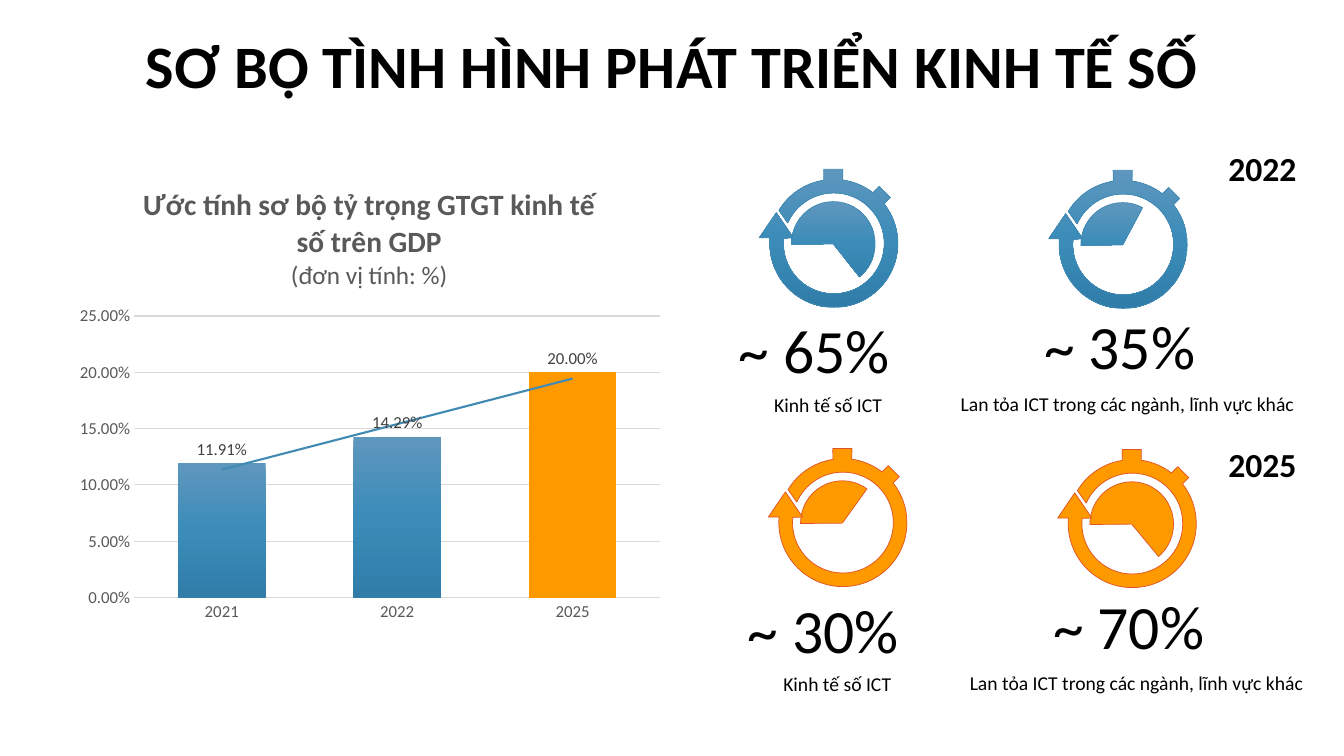
from copy import deepcopy
from math import cos, radians, sin, tan

from lxml import etree
from pptx import Presentation
from pptx.chart.data import CategoryChartData
from pptx.dml.color import RGBColor
from pptx.enum.chart import XL_CHART_TYPE as ChartType, XL_LABEL_POSITION as LabelPos
from pptx.enum.chart import XL_TICK_MARK as Tick
from pptx.enum.shapes import MSO_SHAPE as Preset
from pptx.enum.text import MSO_AUTO_SIZE as AutoSize, PP_ALIGN as Align
from pptx.oxml import parse_xml
from pptx.oxml.ns import nsdecls, qn
from pptx.util import Inches, Pt

FONT = "Calibri"
BLUES = ("5E97BE", "3B8CB9", "307DA9")
BLUE_LINE, ORANGE, ORANGE_LINE = "418AB3", "FF9900", "DF5327"
GRAY, LABEL_GRAY, GRID_GRAY = "595959", "404040", "D9D9D9"

HEADING = "SƠ BỘ TÌNH HÌNH PHÁT TRIỂN KINH TẾ SỐ"
CHART_TITLE = [("Ước tính sơ bộ tỷ trọng GTGT kinh tế số trên GDP", 21, True),
               ("(đơn vị tính: %)", 18, False)]
GDP_SHARE = {"2021": 0.1191, "2022": 0.1429, "2025": 0.2}

ICT, SPREAD = "Kinh tế số ICT", "Lan tỏa ICT trong các ngành, lĩnh vực khác"
# year, fill, outline, then per column: share and end angle of the pie
YEARS = [
    ("2022", BLUES, BLUE_LINE, [("~ 65%", 51.72), ("~ 35%", 298.21)]),
    ("2025", ORANGE, ORANGE_LINE, [("~ 30%", 305.69), ("~ 70%", 50.37)]),
]
# caption, its width, then places of watch, share and caption in the first row
COLUMNS = [
    (ICT, 1.99, (7.53, 1.68), (7.22, 3.05), (7.58, 3.85)),
    (SPREAD, 3.53, (10.4, 1.69), (10.25, 3.01), (9.43, 3.84)),
]
ROW_SHIFT = (0.09, 2.77)
YEAR_AT, YEAR_PITCH = (12.08, 1.42), 2.93
PIE_INSET, PIE_SIZE, PIE_START = 0.32, (0.83, 0.84), 179.44
WATCH_CENTER, OUTER, INNER = (0.74, 0.735), 0.635, 0.5
UNITS = 1000  # outline units per inch


def rgb(color):
    return RGBColor.from_string(color)


def paint(fill, colors):
    """Fill with one colour, or with an even top-to-bottom gradient of three."""
    if isinstance(colors, str):
        fill.solid()
        fill.fore_color.rgb = rgb(colors)
        return
    fill.gradient()
    fill.gradient_angle = 270
    first = fill.gradient_stops[0]._gs
    first.addnext(deepcopy(first))
    for stop, color, position in zip(fill.gradient_stops, colors, (0, 0.5, 1)):
        stop.color.rgb = rgb(color)
        stop.position = position


def style_font(font, size, color="000000", bold=False):
    font.name, font.size, font.bold = FONT, Pt(size), bold
    font.color.rgb = rgb(color)


def add_text(slide, text, at, size, bold=False, align=Align.LEFT, wrap=True,
             inset=None, spacing=0):
    frame = slide.shapes.add_textbox(*map(Inches, at)).text_frame
    frame.word_wrap = wrap
    if inset is None:
        frame.auto_size = AutoSize.SHAPE_TO_FIT_TEXT
    else:
        frame.margin_left = frame.margin_right = frame.margin_bottom = 0
        frame.margin_top = Inches(inset)
    paragraph = frame.paragraphs[0]
    paragraph.alignment = align
    run = paragraph.add_run()
    run.text = text
    style_font(run.font, size, bold=bold)
    if spacing:
        run._r.get_or_add_rPr().set("spc", str(round(spacing * 100)))


def corners(*points):
    return [(point, None) for point in points]


def arc(radius, *angles):
    """Bezier steps round the watch centre, as (end point, control points)."""
    def spot(angle, slope=0):
        a = radians(angle)
        return (WATCH_CENTER[0] + radius * (cos(a) - slope * sin(a)),
                WATCH_CENTER[1] + radius * (sin(a) + slope * cos(a)))
    steps = corners(spot(angles[0]))
    for start, end in zip(angles, angles[1:]):
        slope = 4 / 3 * tan(radians(end - start) / 4)
        steps.append((spot(end), (spot(start, slope), spot(end, -slope))))
    return steps


def watch_outline():
    side_button = corners((1.24, 0.34), (1.3, 0.28), (1.19, 0.17), (1.13, 0.23))
    top_button = corners((0.83, 0), (0.64, 0))
    arrowhead = corners((0.34, 0.68), (0.17, 0.43), (0, 0.68))
    return (side_button + arc(OUTER, -52, -82) + top_button + arc(OUTER, -99, -149)
            + arc(INNER, -156, -90, 0, 90, 186) + arrowhead
            + arc(OUTER, 185, 90, 0, -38))


def add_ring(slide, left, top):
    steps = watch_outline()
    points = [(x * UNITS, y * UNITS) for (x, y), _ in steps]
    builder = slide.shapes.build_freeform(*points[0], scale=Inches(1) / UNITS)
    builder.add_line_segments(points[1:], close=True)
    ring = builder.convert_to_shape(Inches(left), Inches(top))
    lines = list(ring.element.iter(qn("a:lnTo")))
    for line, (_, controls) in zip(lines, steps[1:]):
        if controls:
            line.tag = qn("a:cubicBezTo")
            for i, (x, y) in enumerate(controls):
                handle = etree.Element(qn("a:pt"))
                handle.set("x", str(round(x * UNITS)))
                handle.set("y", str(round(y * UNITS)))
                line.insert(i, handle)
    return ring


def add_watch(slide, left, top, end_angle, fill, outline):
    pie = slide.shapes.add_shape(Preset.PIE, Inches(left + PIE_INSET),
                                 Inches(top + PIE_INSET), *map(Inches, PIE_SIZE))
    for i, angle in enumerate((PIE_START, end_angle)):
        pie.adjustments[i] = angle * 0.6  # 60000 units a degree, in 100000ths
    for part in (pie, add_ring(slide, left, top)):
        part.shadow.inherit = False
        paint(part.fill, fill)
        part.line.color.rgb = rgb(outline)
        part.line.width = Pt(0.5)


def place(parent, **shares):
    """Give a chart title or plot area a fixed place, as shares of the chart."""
    for old in parent.findall(qn("c:layout")):
        parent.remove(old)
    layout = etree.Element(qn("c:layout"))
    manual = etree.SubElement(layout, qn("c:manualLayout"))
    if "w" in shares:
        etree.SubElement(manual, qn("c:layoutTarget")).set("val", "inner")
    for key in ("x", "y"):
        etree.SubElement(manual, qn(f"c:{key}Mode")).set("val", "edge")
    for key, share in shares.items():
        etree.SubElement(manual, qn(f"c:{key}")).set("val", str(share))
    parent.insert(0 if parent.find(qn("c:tx")) is None else 1, layout)


def add_share_chart(slide):
    data = CategoryChartData(number_format="0.00%")
    data.categories = list(GDP_SHARE)
    data.add_series("Series 1", list(GDP_SHARE.values()))
    chart = slide.shapes.add_chart(ChartType.COLUMN_CLUSTERED, Inches(0.67),
                                   Inches(1.67), Inches(6), Inches(4.58), data).chart
    style_font(chart.font, 10)
    chart.has_legend = False
    frame = chart.chart_title.text_frame
    for i, (text, size, bold) in enumerate(CHART_TITLE):
        paragraph = frame.add_paragraph() if i else frame.paragraphs[0]
        run = paragraph.add_run()
        run.text = text
        style_font(run.font, size, GRAY, bold)
    chart.chart_title.include_in_layout = False
    place(chart.chart_title._element, x=0.12, y=0.03)

    for axis in (chart.category_axis, chart.value_axis):
        axis.major_tick_mark = axis.minor_tick_mark = Tick.NONE
        style_font(axis.tick_labels.font, 12, GRAY)
    values = chart.value_axis
    for ruled, width in ((chart.category_axis, 1), (values.major_gridlines, 0.75)):
        ruled.format.line.color.rgb = rgb(GRID_GRAY)
        ruled.format.line.width = Pt(width)
    values.minimum_scale, values.maximum_scale, values.major_unit = 0, 0.25, 0.05
    values.format.line.fill.background()

    plot = chart.plots[0]
    plot.gap_width, plot.overlap, plot.vary_by_categories = 100, -24, False
    series = plot.series[0]
    paint(series.format.fill, BLUES)
    paint(series.points[2].format.fill, ORANGE)
    labels = series.data_labels
    labels.show_value, labels.position = True, LabelPos.OUTSIDE_END
    style_font(labels.font, 12, LABEL_GRAY)
    for numbers in (values.tick_labels, labels):
        numbers.number_format, numbers.number_format_is_linked = "0.00%", False
    series._element.find(qn("c:cat")).addprevious(parse_xml(
        f'<c:trendline {nsdecls("c", "a")}><c:spPr><a:ln w="{Pt(1.5)}"><a:solidFill>'
        f'<a:srgbClr val="{BLUE_LINE}"/></a:solidFill></a:ln></c:spPr>'
        '<c:trendlineType val="linear"/><c:dispRSqr val="0"/><c:dispEq val="0"/>'
        '</c:trendline>'))
    place(chart._chartSpace.chart.plotArea, x=0.11, y=0.32, w=0.87, h=0.61)


def main():
    deck = Presentation()
    deck.slide_width, deck.slide_height = Inches(13.33), Inches(7.5)
    slide = deck.slides.add_slide(deck.slide_layouts[6])
    add_text(slide, HEADING, (0.17, 0.24, 13, 0.72), 43, bold=True,
             align=Align.CENTER, inset=0.04, spacing=0.1)
    add_share_chart(slide)
    for row, (year, fill, outline, shares) in enumerate(YEARS):
        dx, dy = (row * shift for shift in ROW_SHIFT)
        for (caption, width, watch, number, note), (share, end) in zip(COLUMNS, shares):
            add_watch(slide, watch[0] + dx, watch[1] + dy, end, fill, outline)
            add_text(slide, share, (number[0] + dx, number[1] + dy, 1.71, 0.84), 44,
                     align=Align.CENTER, wrap=False)
            add_text(slide, caption, (note[0] + dx, note[1] + dy, width, 0.34), 14)
        add_text(slide, year, (YEAR_AT[0], YEAR_AT[1] + row * YEAR_PITCH, 0.88, 0.5),
                 24, bold=True, align=Align.CENTER, wrap=False)
    deck.save("out.pptx")


if __name__ == "__main__":
    main()
